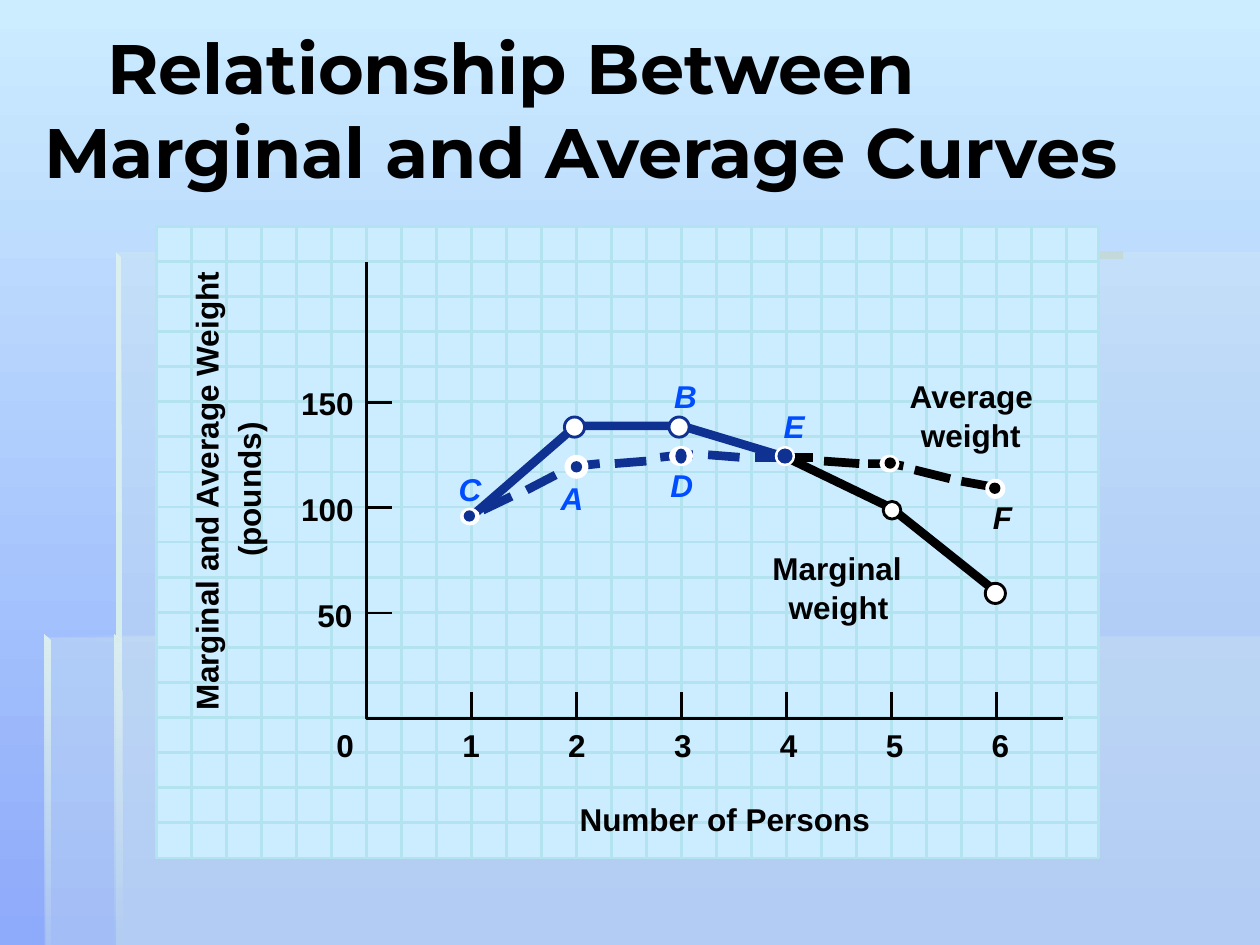
from pptx import Presentation
from pptx import util as u
from pptx.dml import color
from pptx.enum import shapes, text
from pptx.oxml import ns, xmlchemy

Inches = u.Inches
COLORS = {
    "sky": "CCECFF", "periwinkle": "8EAAFA", "panel": "D6EDEE",
    "edge": "DCEFF0", "bar": "C4D9DA", "grid": "B3E3EE", "navy": "0E3192",
    "blue": "004CFF", "black": "000000", "white": "FFFFFF", "title": "010000",
}
LEFT, TOP, WIDTH, HEIGHT = 1.24, 1.8, 7.48, 5.01
CELL = 0.278
ORIGIN_X, ORIGIN_Y = 2.91, 5.7
STEP_X, STEP_Y = 0.833, 0.835

PANELS = [
    [(0.92, 5.05), (0.92, 7.5), (10, 7.5), (10, 5.05)],
    [(0.94, 5.06), (0.36, 5.06), (0.36, 7.5), (10, 7.5), (10, 2), (0.94, 2)],
]
PANEL_EDGES = [
    ([(0.92, 2), (0.92, 2.05), (8.91, 2.05), (8.91, 2)], "panel", 0, "bar", 100, 0),
    ([(0.92, 2), (0.92, 5.1), (0.97, 5.1), (0.96, 2.04)], "edge", 100, "panel", 100, 270),
    ([(0.91, 7.5), (0.97, 7.5), (0.96, 5.08), (0.91, 5.04)], "edge", 100, "panel", 0, 270),
    ([(0.35, 5.04), (0.35, 5.09), (5.35, 5.09), (5.35, 5.04)], "panel", 0, "bar", 100, 0),
    ([(0.35, 5.04), (0.35, 7.5), (0.4, 7.5), (0.4, 5.09)], "edge", 100, "panel", 10, 270),
]
AVERAGE_RISING = [
    [(6.24, 3.63), (5.99, 3.63)], [(5.87, 3.63), (5.62, 3.61)],
    [(5.5, 3.61), (5.41, 3.61), (5.24, 3.63)], [(5.13, 3.66), (4.88, 3.68)],
    [(4.76, 3.68), (4.57, 3.7), (4.5, 3.73)], [(4.41, 3.77), (4.18, 3.89)],
    [(4.06, 3.94), (3.83, 4.05)],
]
AVERAGE_FALLING = [
    [(7.91, 3.87), (7.63, 3.82)], [(7.54, 3.8), (7.26, 3.73)],
    [(7.17, 3.7), (7.07, 3.68), (6.89, 3.68)], [(6.82, 3.68), (6.54, 3.66)],
    [(6.45, 3.63), (6.24, 3.63)],
]
MARGINAL_RISING = [[(3.74, 4.1), (4.57, 3.38), (5.41, 3.38), (6.24, 3.63)]]
MARGINAL_FALLING = [[(6.24, 3.63), (7.07, 4.03), (7.91, 4.7)]]
AXES = [[(2.91, 2.08), (ORIGIN_X, ORIGIN_Y), (8.44, 5.7)]]

MARGINAL_MARKERS = [
    (4.48, 3.31, 0.16, "navy"), (5.31, 3.31, 0.16, "navy"),
    (7.01, 3.98, 0.14, "black"), (7.82, 4.63, 0.16, "black"),
]
AVERAGE_MARKERS = [
    ((4.48, 3.61, 0.19, 0.19), (4.53, 3.66, 0.09, 0.09), "navy"),
    ((5.31, 3.54, 0.19, 0.16), (5.36, 3.56, 0.09, 0.12), "navy"),
    ((6.15, 3.54, 0.16, 0.16), (6.17, 3.56, 0.12, 0.12), "navy"),
    ((3.65, 4.03, 0.16, 0.14), (3.68, 4.05, 0.09, 0.09), "navy"),
    ((6.98, 3.61, 0.16, 0.14), (7.02, 3.63, 0.09, 0.09), "black"),
    ((7.82, 3.8, 0.16, 0.16), (7.85, 3.83, 0.09, 0.09), "black"),
]
POINT_LABELS = [
    ("F", 7.88, 3.95, "black"), ("E", 6.22, 3.23, "blue"), ("A", 4.45, 3.8, "blue"),
    ("D", 5.32, 3.7, "blue"), ("B", 5.35, 2.99, "blue"), ("C", 3.64, 3.73, "blue"),
]
LABELS = [
    ("Average", 7.22, 2.99, 1.12), ("weight", 7.31, 3.3, 0.97),
    ("Marginal", 6.13, 4.36, 1.18), ("weight", 6.26, 4.67, 0.97),
    ("Number of Persons", 4.6, 6.35, 2.43), ("0", 2.67, 5.76, 0.31),
    ("50", 2.52, 4.73, 0.44), ("100", 2.39, 3.89, 0.56), ("150", 2.39, 3.05, 0.56),
]
AXIS_TITLES = [
    ("Marginal and Average Weight", -0.15, 3.7, 3.57),
    ("(pounds)", 1.4, 3.7, 1.14),
]


def rgb(name):
    return color.RGBColor.from_string(COLORS[name])


def paint(shape, fill=None, line=None, weight=1.63):
    shape.shadow.inherit = False
    if fill:
        shape.fill.solid()
        shape.fill.fore_color.rgb = rgb(fill)
    else:
        shape.fill.background()
    if line:
        shape.line.color.rgb = rgb(line)
        shape.line.width = u.Pt(weight)
    else:
        shape.line.fill.background()


def paint_gradient(fill, start, end, angle):
    fill.gradient()
    fill.gradient_angle = angle
    for stop, name in zip(fill.gradient_stops, (start, end)):
        stop.color.rgb = rgb(name)


def set_opacity(shape, *percents):
    fills = shape._element.spPr.findall(".//" + ns.qn("a:srgbClr"))
    for element, percent in zip(fills, percents):
        alpha = xmlchemy.OxmlElement("a:alpha")
        alpha.set("val", str(percent * 1000))
        element.append(alpha)


def add_outline(slide, strokes, close=False):
    emu = [[(Inches(x), Inches(y)) for x, y in stroke] for stroke in strokes]
    builder = slide.shapes.build_freeform(*emu[0][0])
    for index, stroke in enumerate(emu):
        if index:
            builder.move_to(*stroke[0])
        builder.add_line_segments(stroke[1:], close=close)
    return builder.convert_to_shape()


def add_curve(slide, strokes, line, weight=5):
    paint(add_outline(slide, strokes), line=line, weight=weight)


def add_line(slide, x1, y1, x2, y2, line):
    connector = slide.shapes.add_connector(
        shapes.MSO_CONNECTOR.STRAIGHT, Inches(x1), Inches(y1), Inches(x2), Inches(y2))
    connector.line.color.rgb = rgb(line)
    connector.line.width = u.Pt(1.63)
    connector._element.spPr.append(xmlchemy.OxmlElement("a:effectLst"))


def add_preset(slide, kind, box, **style):
    shape = slide.shapes.add_shape(kind, *map(Inches, box))
    paint(shape, **style)


def add_label(slide, words, left, top, width, name="black", height=0.37,
              italic=False, rotation=0):
    shape = slide.shapes.add_textbox(*map(Inches, (left, top, width, height)))
    shape.rotation = rotation
    frame = shape.text_frame
    frame.margin_left = frame.margin_right = frame.margin_top = frame.margin_bottom = 0
    frame.word_wrap = True
    frame.text = words
    font = frame.paragraphs[0].runs[0].font
    font.name, font.size, font.bold, font.italic = "Arial", u.Pt(18), True, italic
    font.color.rgb = rgb(name)


def add_backdrop(slide):
    paint_gradient(slide.background.fill, "sky", "periwinkle", 270)
    for points in PANELS:
        shape = add_outline(slide, [points], close=True)
        paint(shape, fill="panel")
        set_opacity(shape, 30)
    for points, start, start_opacity, end, end_opacity, angle in PANEL_EDGES:
        shape = add_outline(slide, [points], close=True)
        paint(shape)
        paint_gradient(shape.fill, start, end, angle)
        set_opacity(shape, start_opacity, end_opacity)


def set_title(slide):
    title = slide.shapes.title
    title.left, title.top, title.width, title.height = map(Inches, (0.25, 0.24, 9.58, 1.25))
    title.text_frame.text = "Relationship Between Marginal and Average Curves"
    title.text_frame.vertical_anchor = text.MSO_ANCHOR.MIDDLE
    title.text_frame.auto_size = text.MSO_AUTO_SIZE.NONE
    paragraph = title.text_frame.paragraphs[0]
    paragraph.alignment = text.PP_ALIGN.LEFT
    paragraph._p.get_or_add_pPr().set("indent", str(Inches(0.5)))
    font = paragraph.runs[0].font
    font.name, font.size, font.bold = "Montserrat", u.Pt(40), True
    font.color.rgb = rgb("title")


def add_grid(slide):
    rectangle = shapes.MSO_SHAPE.RECTANGLE
    box = (LEFT, TOP, WIDTH, HEIGHT)
    add_preset(slide, rectangle, box, fill="sky")
    for row in range(1, 18):
        y = TOP + row * CELL
        add_line(slide, LEFT, y, LEFT + WIDTH, y, "grid")
    for column in range(1, 27):
        x = LEFT + column * CELL
        add_line(slide, x, TOP + HEIGHT, x, TOP, "grid")
    add_preset(slide, rectangle, box, line="grid")


def add_axes(slide):
    add_curve(slide, AXES, "black", 1.63)
    for person in range(1, 7):
        x = ORIGIN_X + person * STEP_X
        add_line(slide, x, ORIGIN_Y, x, ORIGIN_Y - 0.21, "black")
        add_label(slide, str(person), 2.83 + person * 0.84, 5.76, 0.31)
    for level in range(1, 4):
        y = ORIGIN_Y - level * STEP_Y
        add_line(slide, ORIGIN_X, y, ORIGIN_X + 0.2, y, "black")


def add_curves(slide):
    oval = shapes.MSO_SHAPE.OVAL
    add_curve(slide, AVERAGE_RISING, "navy")
    add_curve(slide, AVERAGE_FALLING, "black")
    add_curve(slide, MARGINAL_RISING, "navy")
    add_curve(slide, MARGINAL_FALLING, "black")
    for left, top, size, line in MARGINAL_MARKERS:
        add_preset(slide, oval, (left, top, size, size), fill="white", line=line)
    for halo, dot, fill in AVERAGE_MARKERS:
        add_preset(slide, oval, halo, fill="white")
        add_preset(slide, oval, dot, fill=fill)


def add_labels(slide):
    for words, left, top, name in POINT_LABELS:
        add_label(slide, words, left, top, 0.37, name, italic=True)
    for label in LABELS:
        add_label(slide, *label)
    for label in AXIS_TITLES:
        add_label(slide, *label, height=0.3, rotation=270)


def main():
    presentation = Presentation()
    presentation.slide_width, presentation.slide_height = Inches(10), Inches(7.5)
    slide = presentation.slides.add_slide(presentation.slide_layouts[5])
    add_backdrop(slide)
    set_title(slide)
    add_grid(slide)
    add_axes(slide)
    add_curves(slide)
    add_labels(slide)
    presentation.save("out.pptx")


if __name__ == "__main__":
    main()
